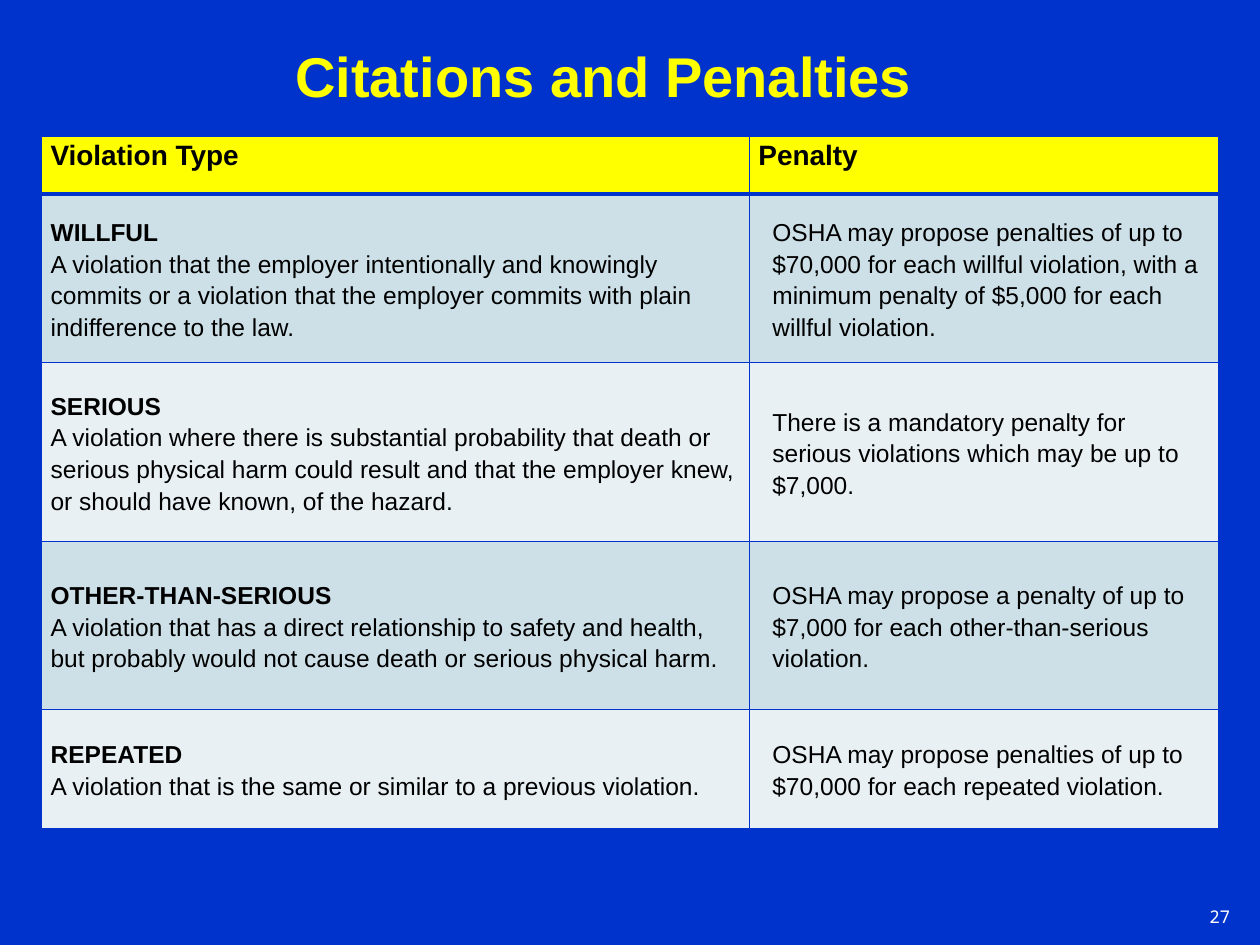
from lxml.etree import SubElement
from pptx import Presentation
from pptx.dml.color import RGBColor
from pptx.enum.text import MSO_ANCHOR, MSO_AUTO_SIZE, PP_ALIGN
from pptx.oxml.ns import qn
from pptx.util import Cm, Pt

BLUE = RGBColor(0x00, 0x33, 0xCC)
YELLOW = RGBColor(0xFF, 0xFF, 0x00)
BLACK = RGBColor(0x00, 0x00, 0x00)
WHITE = RGBColor(0xFF, 0xFF, 0xFF)
BAND_DARK = RGBColor(0xCD, 0xE0, 0xE8)
BAND_LIGHT = RGBColor(0xE8, 0xF0, 0xF4)

HEADINGS = ("Violation Type", "Penalty")
VIOLATIONS = [
    ("WILLFUL",
     "A violation that the employer intentionally and knowingly commits or a violation "
     "that the employer commits with plain indifference to the law.",
     "OSHA may propose penalties of up to $70,000 for each willful violation, "
     "with a minimum penalty of $5,000 for each willful violation."),
    ("SERIOUS",
     "A violation where there is substantial probability that death or serious physical "
     "harm could result and that the employer knew, or should have known, of the hazard.",
     "There is a mandatory penalty for serious violations which may be up to $7,000."),
    ("OTHER-THAN-SERIOUS",
     "A violation that has a direct relationship to safety and health, but probably "
     "would not cause death or serious physical harm.",
     "OSHA may propose a penalty of up to $7,000 for each other-than-serious violation."),
    ("REPEATED",
     "A violation that is the same or similar to a previous violation.",
     "OSHA may propose penalties of up to $70,000 for each repeated violation."),
]
COLUMN_WIDTHS = (14.27, 9.45)
ROW_HEIGHTS = (1.17, 3.4, 3.61, 3.38, 2.41)


def write_text(para, text, size=14, bold=False, color=BLACK, font="Arial",
               align=PP_ALIGN.LEFT, line_spacing=None, indent=0):
    """Fill one paragraph with a single formatted run."""
    para.alignment = align
    if line_spacing:
        para.line_spacing = line_spacing
    if indent:
        properties = para._p.get_or_add_pPr()
        properties.set("marL", str(Cm(indent)))
        properties.set("indent", "0")
    span = para.add_run()
    span.text = text
    span.font.size = Pt(size)
    span.font.bold = bold
    span.font.name = font
    span.font.color.rgb = color


class SlideBuilder:
    """Holds the page and its style, and adds each kind of element."""

    def __init__(self, deck):
        self.page = deck.slides.add_slide(deck.slide_layouts[5])
        background = self.page.background.fill
        background.solid()
        background.fore_color.rgb = BLUE

    def title(self, text, left, top, width, height):
        box = self.page.shapes.title
        box.left, box.top, box.width, box.height = map(Cm, (left, top, width, height))
        frame = box.text_frame
        frame.auto_size = MSO_AUTO_SIZE.NONE
        frame.vertical_anchor = MSO_ANCHOR.BOTTOM
        frame.margin_bottom = Cm(0.05)
        write_text(frame.paragraphs[0], text, size=32, bold=True, color=YELLOW,
                   align=PP_ALIGN.CENTER)

    def page_number(self, text, left, top, width, height):
        box = self.page.shapes.add_textbox(*map(Cm, (left, top, width, height)))
        frame = box.text_frame
        frame.word_wrap = True
        frame.vertical_anchor = MSO_ANCHOR.BOTTOM
        write_text(frame.paragraphs[0], text, size=10, color=WHITE,
                   font="Noto Sans Mono", align=PP_ALIGN.RIGHT)

    def table(self, left, top, widths, heights):
        frame = self.page.shapes.add_table(
            len(heights), len(widths), Cm(left), Cm(top),
            Cm(sum(widths)), Cm(sum(heights)))
        grid = frame.table
        for column, width in zip(grid.columns, widths):
            column.width = Cm(width)
        for row, height in zip(grid.rows, heights):
            row.height = Cm(height)
        return grid

    def cell(self, cell, lines, fill, anchor=MSO_ANCHOR.MIDDLE, top_line=1, bottom_line=1):
        """Format a cell; lines is a list of (text, format) pairs."""
        cell.margin_left = cell.margin_right = Cm(0.18)
        cell.margin_top = cell.margin_bottom = 0
        cell.vertical_anchor = anchor
        self.borders(cell, L=1, R=1, T=top_line, B=bottom_line)
        cell.fill.solid()
        cell.fill.fore_color.rgb = fill
        frame = cell.text_frame
        for number, (text, style) in enumerate(lines):
            para = frame.add_paragraph() if number else frame.paragraphs[0]
            write_text(para, text, line_spacing=1.15, **style)

    def borders(self, cell, **widths):
        properties = cell._tc.get_or_add_tcPr()
        for side, width in widths.items():
            line = SubElement(properties, qn("a:ln" + side), w=str(Pt(width)))
            SubElement(SubElement(line, qn("a:solidFill")), qn("a:srgbClr"), val=str(BLUE))


def main():
    deck = Presentation()
    deck.slide_width, deck.slide_height = Cm(25.4), Cm(19.05)
    builder = SlideBuilder(deck)

    # Penalty table: heading row, then banded rows
    grid = builder.table(0.84, 2.74, COLUMN_WIDTHS, ROW_HEIGHTS)
    for column, heading in enumerate(HEADINGS):
        builder.cell(grid.cell(0, column), [(heading, dict(size=16, bold=True))],
                     YELLOW, anchor=MSO_ANCHOR.TOP, bottom_line=3)
    for row, (name, meaning, penalty) in enumerate(VIOLATIONS, start=1):
        fill = BAND_DARK if row % 2 else BAND_LIGHT
        top_line = 3 if row == 1 else 1
        builder.cell(grid.cell(row, 0), [(name, dict(bold=True)), (meaning, {})],
                     fill, top_line=top_line)
        builder.cell(grid.cell(row, 1), [(penalty, dict(indent=0.28))],
                     fill, top_line=top_line)

    # Page number and title
    builder.page_number("27", 24.03, 17.8, 1.02, 1.02)
    builder.title("Citations and Penalties", 0.64, 0.64, 23.06, 1.6)

    deck.save("out.pptx")


if __name__ == "__main__":
    main()
